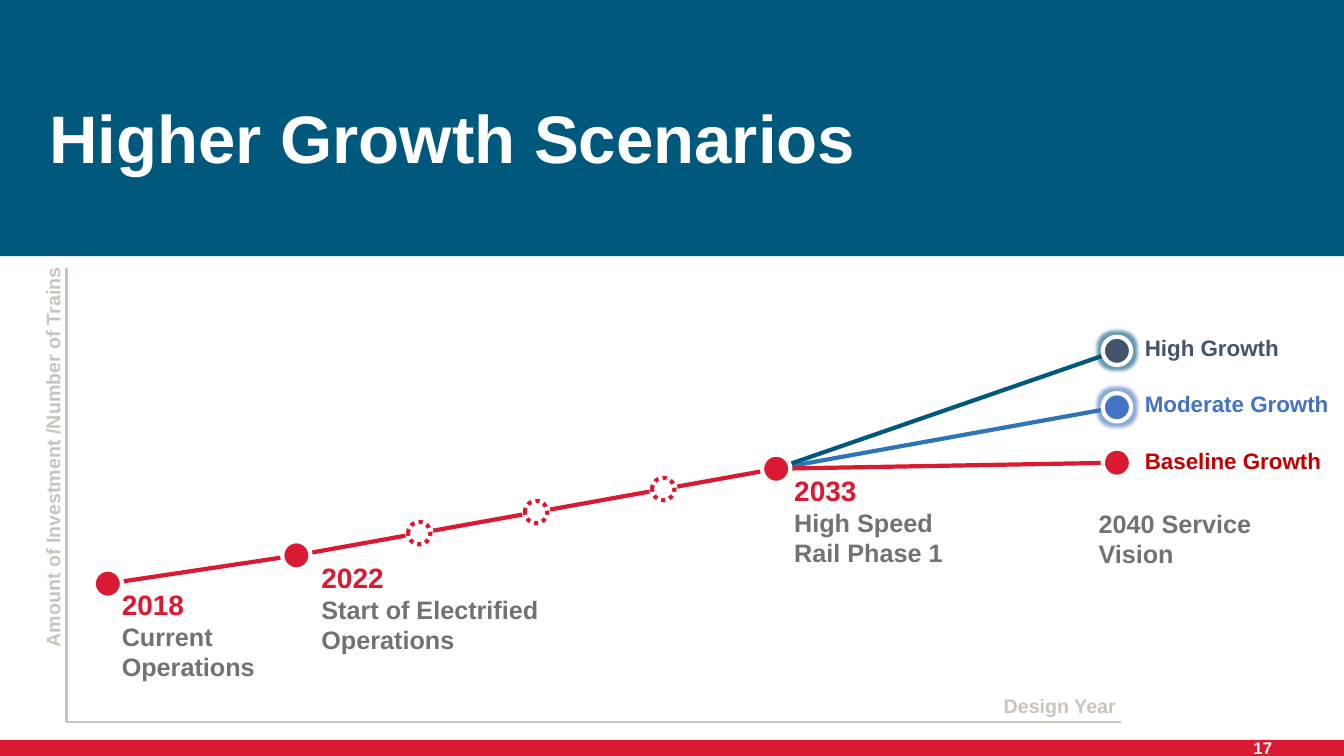
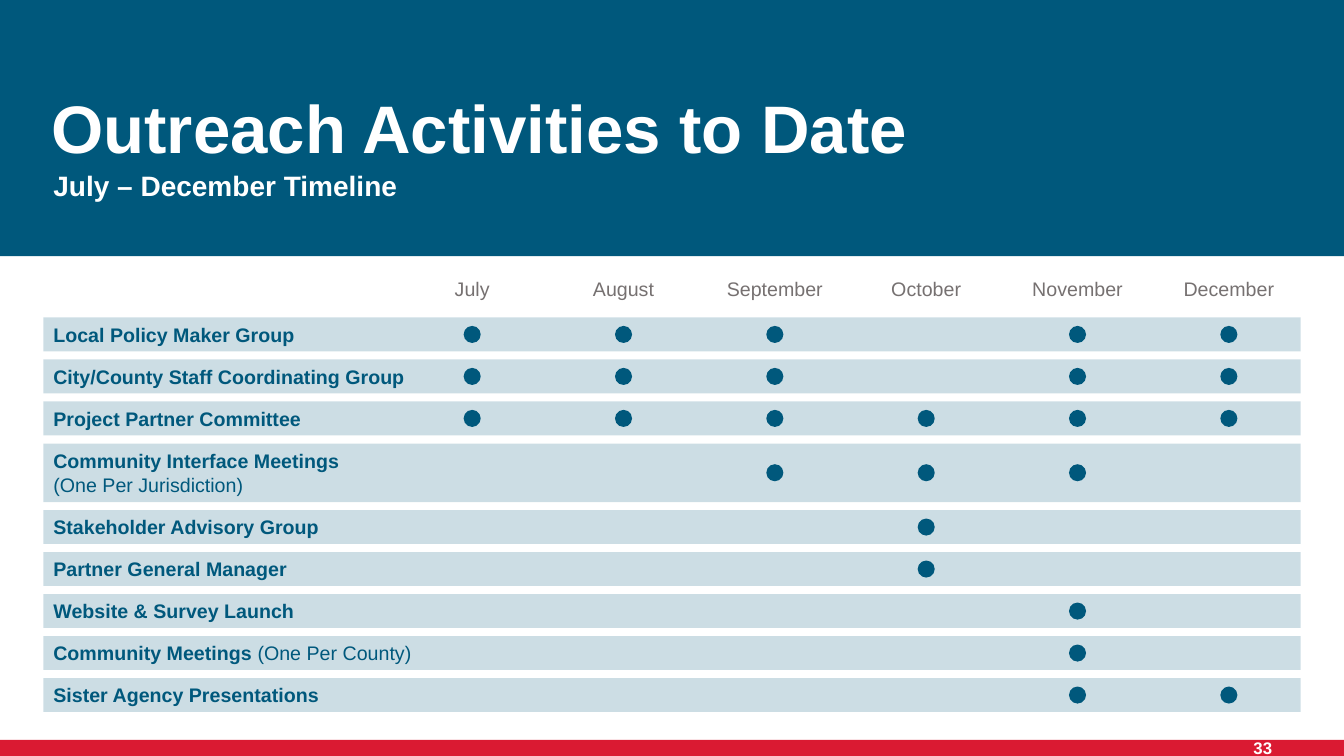
from typing import NamedTuple

from lxml import etree
from pptx import Presentation
from pptx.dml.color import RGBColor
from pptx.enum import dml, shapes, text
from pptx.oxml import ns
from pptx.util import Pt

TEAL = RGBColor(0x00, 0x58, 0x7C)
RED = RGBColor(0xDA, 0x1A, 0x32)
WHITE = RGBColor(0xFF, 0xFF, 0xFF)
SAND = RGBColor(0xCB, 0xC4, 0xBC)
GRAY = RGBColor(0x76, 0x71, 0x71)
SLATE = RGBColor(0x44, 0x54, 0x6A)
BLUE = RGBColor(0x44, 0x72, 0xC4)
SKY = RGBColor(0x2E, 0x75, 0xB6)
BRICK = RGBColor(0xC0, 0x00, 0x00)

FONT = "Arial"
WIDE, HIGH = 960, 540
LEFT = text.PP_ALIGN.LEFT
MID = text.PP_ALIGN.CENTER
RIGHT = text.PP_ALIGN.RIGHT
RECT = shapes.MSO_SHAPE.RECTANGLE
OVAL = shapes.MSO_SHAPE.OVAL


class Box(NamedTuple):
    x: float
    y: float
    w: float
    h: float


class Spot(NamedTuple):
    x: float
    y: float


class Run(NamedTuple):
    words: str
    size: float
    color: RGBColor
    bold: bool = True


class Event(NamedTuple):
    box: Box
    year: str
    lines: list[str]


class Branch(NamedTuple):
    name: str
    end: Spot
    line: RGBColor
    dot: RGBColor
    ink: RGBColor
    top: float
    glow: RGBColor | None


class Row(NamedTuple):
    name: str
    months: list[int]
    note: str = ""
    tall: bool = False


def place(box: Box) -> list[Pt]:
    return [Pt(side) for side in box]


def write(frame, paras: list[list[Run]], align=LEFT) -> None:
    frame.word_wrap = True
    frame.auto_size = text.MSO_AUTO_SIZE.NONE
    for i, runs in enumerate(paras):
        para = frame.add_paragraph() if i else frame.paragraphs[0]
        para.alignment = align
        for item in runs:
            run = para.add_run()
            run.text = item.words
            run.font.name = FONT
            run.font.size = Pt(item.size)
            run.font.bold = item.bold
            run.font.color.rgb = item.color


def label(slide, box: Box, paras: list[list[Run]], align=LEFT):
    shape = slide.shapes.add_textbox(*place(box))
    write(shape.text_frame, paras, align)
    return shape


def block(slide, kind, box: Box, fill: RGBColor):
    shape = slide.shapes.add_shape(kind, *place(box))
    shape.shadow.inherit = False
    shape.fill.solid()
    shape.fill.fore_color.rgb = fill
    shape.line.fill.background()
    return shape


def disc(slide, spot: Spot, size: float, fill: RGBColor, edge: RGBColor | None = None):
    """Draw a circle centred on the spot."""
    box = Box(spot.x - size / 2, spot.y - size / 2, size, size)
    shape = block(slide, OVAL, box, fill)
    if edge is not None:
        shape.line.color.rgb = edge
        shape.line.width = Pt(3)
    return shape


def line(slide, start: Spot, end: Spot, color: RGBColor, width: float = 3) -> None:
    ends = [Pt(value) for value in (*start, *end)]
    link = slide.shapes.add_connector(shapes.MSO_CONNECTOR.STRAIGHT, *ends)
    link.line.color.rgb = color
    link.line.width = Pt(width)
    etree.SubElement(link.element.spPr, ns.qn("a:effectLst"))


def fade(color, share: int) -> None:
    """Set the opacity, in percent, of a colour element."""
    etree.SubElement(color, ns.qn("a:alpha"), val=str(share * 1000))


def shine(shape, color: RGBColor) -> None:
    """Add a soft glow around the shape."""
    effects = shape.element.spPr.find(ns.qn("a:effectLst"))
    glow = etree.SubElement(effects, ns.qn("a:glow"), rad=str(Pt(5)))
    fade(etree.SubElement(glow, ns.qn("a:srgbClr"), val=str(color)), 60)


def brand(slide) -> None:
    """Move the two bands into the layout, so that every slide has them."""
    layout = slide.slide_layout
    for holder in list(layout.placeholders):
        if holder.placeholder_format.type != shapes.PP_PLACEHOLDER.TITLE:
            holder.element.getparent().remove(holder.element)
    for box, color in ((Box(0, 528.5, WIDE, 11.5), RED), (Box(0, 0, WIDE, 183), TEAL)):
        band = block(slide, RECT, box, color)
        layout.shapes.element.insert(2, band.element)


def head(slide, words: str, box: Box, page: str) -> None:
    title = slide.shapes.title
    title.left, title.top, title.width, title.height = place(box)
    write(title.text_frame, [[Run(words, 48, WHITE)]])
    title.text_frame.vertical_anchor = text.MSO_ANCHOR.MIDDLE
    title.text_frame.paragraphs[0].line_spacing = 0.9
    label(slide, Box(882, 523.5, 40, 21.5), [[Run(page, 12, WHITE)]], MID)


HUB = Spot(554.4, 334.8)
TRUNK = [Spot(77, 416.9), Spot(211.7, 396.7), HUB]
STEPS = [299.5, 383, 473.8]
DOT = 20.2
EVENTS = [
    Event(Box(79.9, 416.2, 144, 75), "2018", ["Current", "Operations"]),
    Event(Box(222.5, 396.7, 217, 75), "2022", ["Start of Electrified", "Operations"]),
    Event(Box(560.2, 334.8, 146, 75), "2033", ["High Speed", "Rail Phase 1"]),
]
FORKS = [
    Branch("Moderate Growth", Spot(797.8, 290.9), SKY, BLUE, BLUE, 275, BLUE),
    Branch("Baseline Growth", Spot(797.8, 330.5), RED, RED, BRICK, 316.1, None),
    Branch("High Growth", Spot(797.8, 250.6), TEAL, SLATE, SLATE, 235.4, TEAL),
]


def draw_growth(slide) -> None:
    head(slide, "Higher Growth Scenarios", Box(28.1, 78.5, 912, 45.4), "17")

    base = Spot(47.5, 515.5)
    line(slide, Spot(base.x, 191.5), base, SAND, 1.5)
    line(slide, Spot(800.6, base.y), base, SAND, 1.5)
    axis = [[Run("Amount of Investment /Number of Trains", 14, SAND)]]
    label(slide, Box(-131.8, 341.3, 339, 24.2), axis, RIGHT).rotation = 270
    label(slide, Box(530.6, 491.8, 273.6, 24.2), [[Run("Design Year", 14, SAND)]], RIGHT)

    for fork in FORKS:
        line(slide, HUB, fork.end, fork.line)
    for start, end in zip(TRUNK, TRUNK[1:]):
        line(slide, start, end, RED)

    for spot in TRUNK:
        disc(slide, spot, DOT, RED, WHITE)
    start = TRUNK[1]
    slope = (HUB.y - start.y) / (HUB.x - start.x)
    for x in STEPS:
        spot = Spot(x, start.y + slope * (x - start.x))
        disc(slide, spot, DOT, WHITE)
        ring = disc(slide, spot, 16, WHITE, RED)
        ring.line.dash_style = dml.MSO_LINE.ROUND_DOT

    for fork in FORKS:
        dot = disc(slide, fork.end, DOT, fork.dot, WHITE)
        if fork.glow is not None:
            shine(dot, fork.glow)
        label(slide, Box(810.7, fork.top, 149, 26.6), [[Run(fork.name, 16, fork.ink)]])

    for event in EVENTS:
        lines = [[Run(words, 18, GRAY)] for words in event.lines]
        label(slide, event.box, [[Run(event.year, 20, RED)], *lines])
    label(slide, Box(777.6, 359.3, 139.7, 51), [[Run("2040 Service Vision", 18, GRAY)]])


MONTHS = ["July", "August", "September", "October", "November", "December"]
FIRST, PITCH = 337.3, 108.1
ROWS = [
    Row("Local Policy Maker Group", [0, 1, 2, 4, 5]),
    Row("City/County Staff Coordinating Group", [0, 1, 2, 4, 5]),
    Row("Project Partner Committee", [0, 1, 2, 3, 4, 5]),
    Row("Community Interface Meetings", [2, 3, 4], "(One Per Jurisdiction)", True),
    Row("Stakeholder Advisory Group", [3]),
    Row("Partner General Manager", [3]),
    Row("Website & Survey Launch", [4]),
    Row("Community Meetings", [4], " (One Per County)"),
    Row("Sister Agency Presentations", [4, 5]),
]


def draw_reach(slide) -> None:
    head(slide, "Outreach Activities to Date", Box(29.5, 71.3, 888, 45.4), "33")
    label(slide, Box(31, 116.6, 300, 31.5), [[Run("July – December Timeline", 20, WHITE)]])

    for i, month in enumerate(MONTHS):
        box = Box(FIRST + i * PITCH - 50, 194.4, 100, 24.2)
        label(slide, box, [[Run(month, 14, GRAY, False)]], MID)

    top = 226.8
    for row in ROWS:
        high = 41.8 if row.tall else 24.2
        bar = block(slide, RECT, Box(31, top, 898, high), TEAL)
        fade(bar.element.spPr.find(".//" + ns.qn("a:srgbClr")), 20)
        runs = [Run(row.name, 14, TEAL)]
        if row.note:
            runs.append(Run(row.note, 14, TEAL, False))
        write(bar.text_frame, [[run] for run in runs] if row.tall else [runs])
        bar.text_frame.vertical_anchor = text.MSO_ANCHOR.MIDDLE
        for month in row.months:
            disc(slide, Spot(FIRST + month * PITCH, top + high / 2), 12.2, TEAL)
        top += high + 5.8


def main() -> None:
    deck = Presentation()
    deck.slide_width, deck.slide_height = Pt(WIDE), Pt(HIGH)
    layout = deck.slide_layouts.get_by_name("Title Only")
    growth, reach = [deck.slides.add_slide(layout) for _ in range(2)]
    brand(growth)
    draw_growth(growth)
    draw_reach(reach)
    deck.save("out.pptx")


if __name__ == "__main__":
    main()
